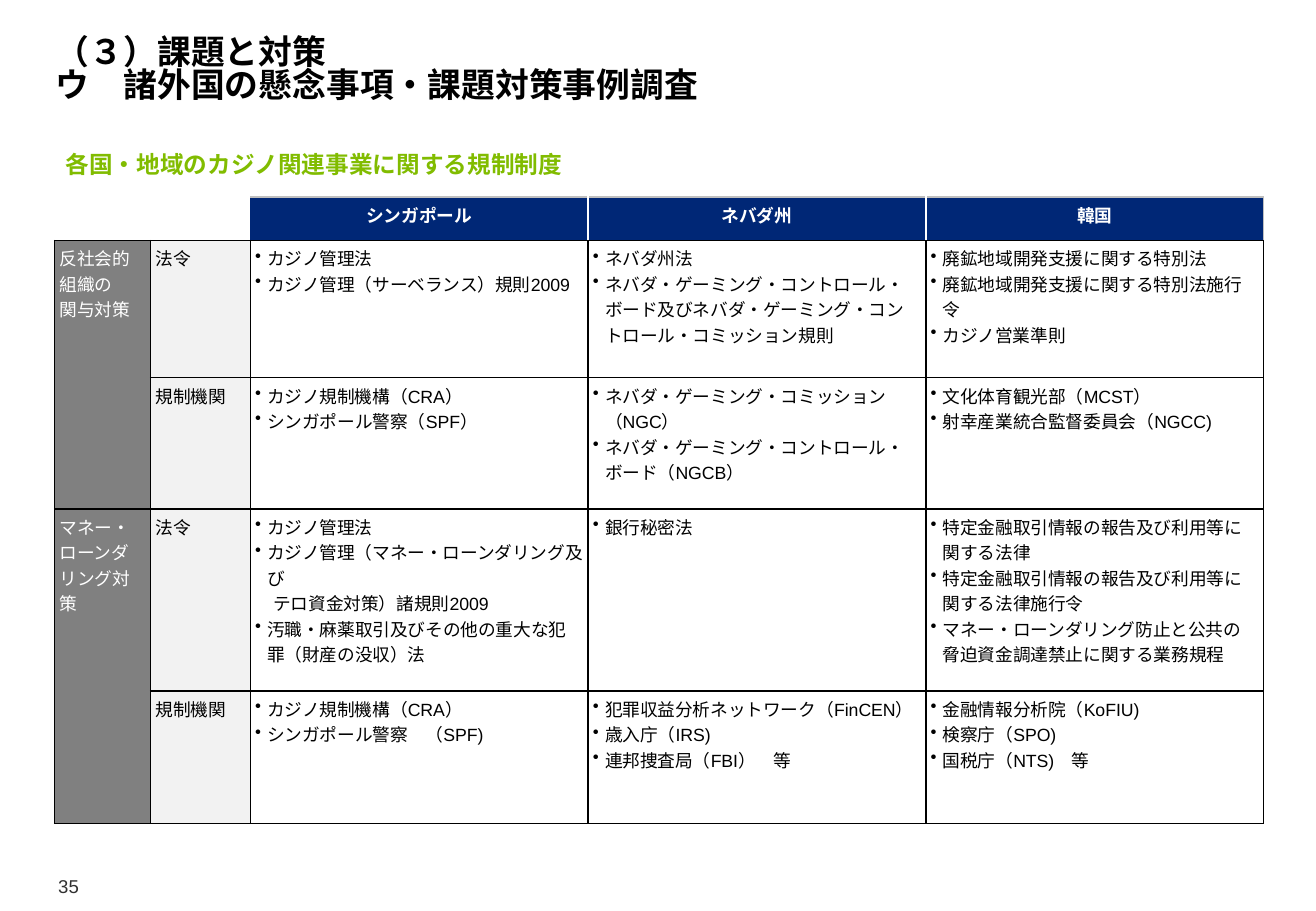
from lxml.etree import SubElement
from pptx import Presentation
from pptx.dml.color import RGBColor
from pptx.enum.text import MSO_ANCHOR, MSO_AUTO_SIZE, PP_ALIGN
from pptx.oxml.ns import qn
from pptx.util import Inches, Pt

BLACK = RGBColor(0x00, 0x00, 0x00)
WHITE = RGBColor(0xFF, 0xFF, 0xFF)
NAVY = RGBColor(0x00, 0x27, 0x76)
GREEN = RGBColor(0x81, 0xBC, 0x00)
DARK_GRAY = RGBColor(0x31, 0x31, 0x31)
MID_GRAY = RGBColor(0x80, 0x80, 0x80)
PALE_GRAY = RGBColor(0xF2, 0xF2, 0xF2)
LINE_GRAY = RGBColor(0xBF, 0xBF, 0xBF)

TITLE = "（３）課題と対策\vウ　諸外国の懸念事項・課題対策事例調査"
SUBTITLE = "各国・地域のカジノ関連事業に関する規制制度"
PAGE_NUMBER = "35"
CONTINUATION = "テロ資金対策）諸規則2009"
HEADERS = ["シンガポール", "ネバダ州", "韓国"]
TOPICS = [["反社会的組織の", "関与対策"], ["マネー・ローンダリング対策"]]
KINDS = ["法令", "規制機関"]
RULES = [
    [
        ["カジノ管理法", "カジノ管理（サーベランス）規則2009"],
        ["ネバダ州法",
         "ネバダ・ゲーミング・コントロール・ボード及びネバダ・ゲーミング・コントロール・コミッション規則"],
        ["廃鉱地域開発支援に関する特別法", "廃鉱地域開発支援に関する特別法施行令", "カジノ営業準則"],
    ],
    [
        ["カジノ規制機構（CRA）", "シンガポール警察（SPF）"],
        ["ネバダ・ゲーミング・コミッション（NGC）", "ネバダ・ゲーミング・コントロール・ボード（NGCB）"],
        ["文化体育観光部（MCST）", "射幸産業統合監督委員会（NGCC)"],
    ],
    [
        ["カジノ管理法", "カジノ管理（マネー・ローンダリング及び", CONTINUATION,
         "汚職・麻薬取引及びその他の重大な犯罪（財産の没収）法"],
        ["銀行秘密法"],
        ["特定金融取引情報の報告及び利用等に関する法律",
         "特定金融取引情報の報告及び利用等に関する法律施行令",
         "マネー・ローンダリング防止と公共の脅迫資金調達禁止に関する業務規程"],
    ],
    [
        ["カジノ規制機構（CRA）", "シンガポール警察　（SPF)"],
        ["犯罪収益分析ネットワーク（FinCEN）", "歳入庁（IRS)", "連邦捜査局（FBI）　等"],
        ["金融情報分析院（KoFIU)", "検察庁（SPO)", "国税庁（NTS)　等"],
    ],
]
COLUMN_WIDTHS = [0.79, 0.82, 2.78, 2.78, 2.78]
ROW_HEIGHTS = [0.29, 1.13, 1.08, 1.5, 1.09]
MARGINS = ["margin_left", "margin_top", "margin_right", "margin_bottom"]


def set_values(target, values):
    """Set every attribute named in a dict."""
    for name, value in values.items():
        setattr(target, name, value)


def write_text(paragraph, text, size, color, bold=False):
    """Put formatted text into a paragraph."""
    paragraph.text = text
    if not paragraph.runs:
        paragraph.add_run()
    for span in paragraph.runs:
        set_values(span.font, {"name": "Arial", "size": Pt(size), "bold": bold})
        span.font.color.rgb = color


def fill_frame(shape, text, inset, anchor, size, color, bold):
    """Format the frame of a title or text box and write its text."""
    frame = shape.text_frame
    set_values(frame, dict.fromkeys(MARGINS, Inches(inset)))
    set_values(frame, {"word_wrap": True, "auto_size": MSO_AUTO_SIZE.NONE,
                       "vertical_anchor": anchor})
    write_text(frame.paragraphs[0], text, size, color, bold)
    return frame.paragraphs[0]


def indent(paragraph, text):
    """Give a paragraph a hanging bullet, or a plain indent for a continuation."""
    properties = paragraph._p.get_or_add_pPr()
    bulleted = text != CONTINUATION
    properties.set("marL", str(Inches(0.1 if bulleted else 0.15)))
    properties.set("indent", str(Inches(-0.1 if bulleted else 0)))
    if bulleted:
        SubElement(properties, qn("a:buChar"), char="•")


def draw_borders(cell, colors):
    """Draw the sides of a cell, in the order left, right, top, bottom."""
    properties = cell._tc.get_or_add_tcPr()
    for side, color in zip("LRTB", colors):
        line = SubElement(properties, qn(f"a:ln{side}"), w=str(Pt(1)))
        if color is None:
            SubElement(line, qn("a:noFill"))
        else:
            fill = SubElement(line, qn("a:solidFill"))
            SubElement(fill, qn("a:srgbClr"), val=str(color))


def cell_style(row, column):
    """Return the lines, fill, text colour and border colours of a cell."""
    if row == 0:
        if column < 2:
            return [""], None, BLACK, [None, None, None, BLACK]
        right = LINE_GRAY if column == 4 else WHITE
        left = None if column == 2 else WHITE
        return [HEADERS[column - 2]], NAVY, WHITE, [left, right, LINE_GRAY, BLACK]
    borders = [BLACK] * 4
    if column == 0:
        lines = TOPICS[row // 2] if row % 2 else [""]
        return lines, MID_GRAY, WHITE, borders
    if column == 1:
        return [KINDS[(row - 1) % 2]], PALE_GRAY, BLACK, borders
    return RULES[row - 1][column - 2], None, BLACK, borders


def fill_cell(cell, row, column):
    """Write and format one table cell."""
    lines, fill, color, borders = cell_style(row, column)
    set_values(cell, dict.fromkeys(MARGINS, Inches(0.04)))
    draw_borders(cell, borders)
    if fill is None:
        cell.fill.background()
    else:
        cell.fill.solid()
        cell.fill.fore_color.rgb = fill
    frame = cell.text_frame
    for index, text in enumerate(lines):
        para = frame.add_paragraph() if index else frame.paragraphs[0]
        if row and column > 1:
            indent(para, text)
        para.alignment = PP_ALIGN.LEFT if row else PP_ALIGN.CENTER
        write_text(para, text, 10.5, color, row == 0)


def add_rules_table(page):
    """Add the table of rules by topic and region."""
    table = page.shapes.add_table(
        len(ROW_HEIGHTS), len(COLUMN_WIDTHS), Inches(0.45), Inches(1.62),
        Inches(sum(COLUMN_WIDTHS)), Inches(sum(ROW_HEIGHTS))).table
    set_values(table, {"first_row": False, "horz_banding": False})
    for column, width in zip(table.columns, COLUMN_WIDTHS):
        column.width = Inches(width)
    for row, height in zip(table.rows, ROW_HEIGHTS):
        row.height = Inches(height)
    for row in range(len(ROW_HEIGHTS)):
        for column in range(len(COLUMN_WIDTHS)):
            fill_cell(table.cell(row, column), row, column)
    for top in (1, 3):
        table.cell(top, 0).merge(table.cell(top + 1, 0))


def main():
    """Build the slide and save the deck."""
    deck = Presentation()
    set_values(deck, {"slide_width": Inches(10.83), "slide_height": Inches(7.5)})
    page = deck.slides.add_slide(deck.slide_layouts[5])
    title = page.shapes.title
    set_values(title, {"left": Inches(0.46), "top": Inches(0.15),
                       "width": Inches(9.92), "height": Inches(0.71)})
    para = fill_frame(title, TITLE, 0, MSO_ANCHOR.BOTTOM, 20, BLACK, True)
    set_values(para, {"alignment": PP_ALIGN.LEFT, "line_spacing": 0.82})
    box = page.shapes.add_textbox(Inches(0.46), Inches(1.11), Inches(4.72), Inches(0.47))
    para = fill_frame(box, SUBTITLE, 0.08, MSO_ANCHOR.MIDDLE, 14, GREEN, True)
    para.line_spacing = 1.06
    add_rules_table(page)
    box = page.shapes.add_textbox(Inches(0.45), Inches(7.2), Inches(0.2), Inches(0.19))
    para = fill_frame(box, PAGE_NUMBER, 0, MSO_ANCHOR.BOTTOM, 11, DARK_GRAY, False)
    para.alignment = PP_ALIGN.RIGHT
    deck.save("out.pptx")


if __name__ == "__main__":
    main()
